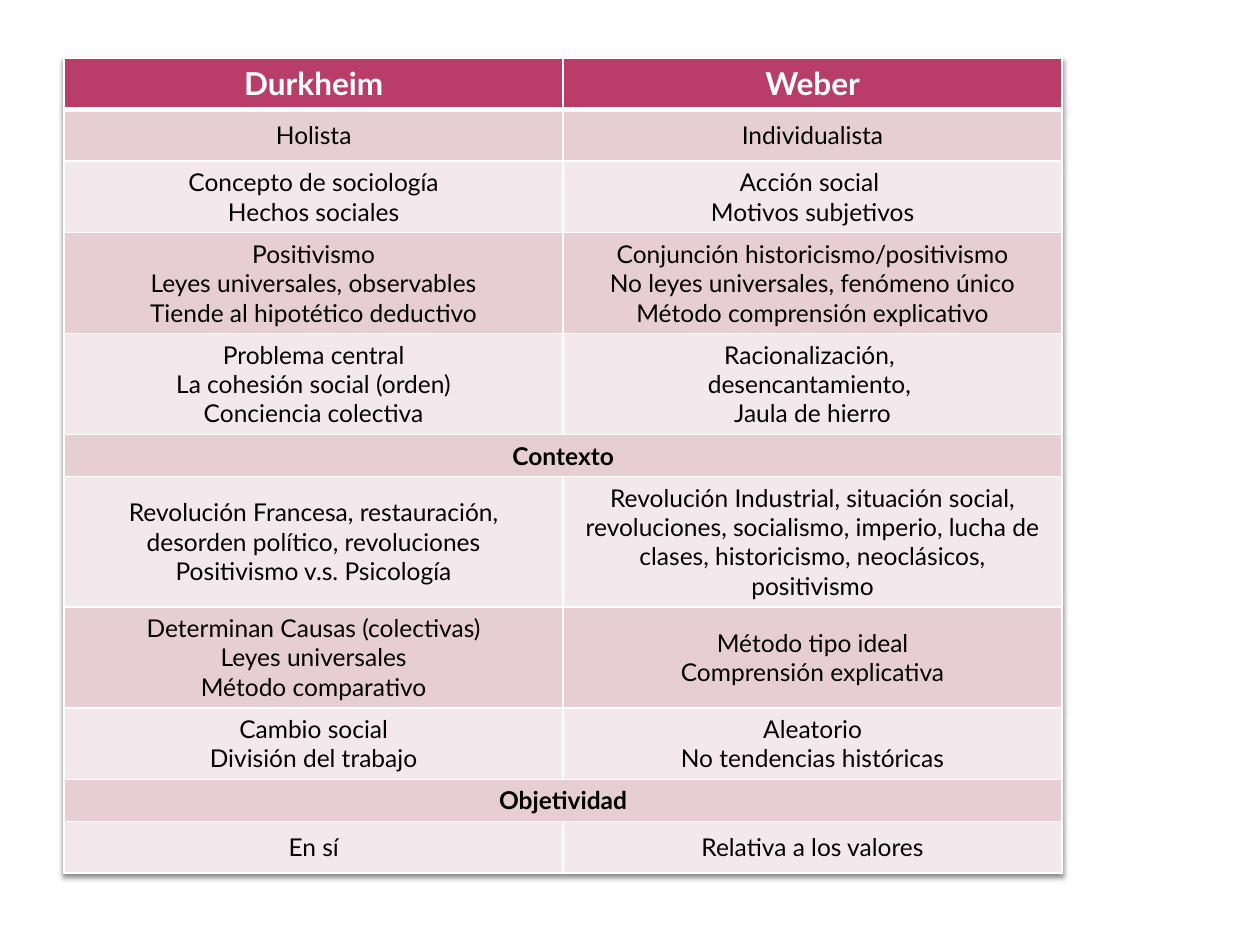
from dataclasses import dataclass

from lxml.etree import SubElement
from pptx import Presentation
from pptx.dml.color import RGBColor
from pptx.enum.text import MSO_ANCHOR, PP_ALIGN
from pptx.oxml import parse_xml
from pptx.oxml.ns import nsdecls, qn
from pptx.util import Inches, Pt

# One tuple per row, one list of paragraphs per cell; a single cell spans the row.
ROWS = [
    (["Durkheim"], ["Weber"]),
    (["Holista"], ["Individualista"]),
    (["Concepto de sociología", "Hechos sociales"],
     ["Acción social ", "Motivos subjetivos"]),
    (["Positivismo", "Leyes universales, observables",
      "Tiende al hipotético deductivo"],
     ["Conjunción historicismo/positivismo",
      "No leyes universales, fenómeno único",
      "Método comprensión explicativo"]),
    (["Problema central", "La cohesión social (orden)", "Conciencia colectiva"],
     ["Racionalización, ", "desencantamiento, ", "Jaula de hierro"]),
    (["Contexto"],),
    (["Revolución Francesa, restauración, desorden político, revoluciones",
      "Positivismo v.s. Psicología"],
     ["Revolución Industrial, situación social, revoluciones, socialismo, "
      "imperio, lucha de clases, historicismo, neoclásicos, positivismo"]),
    (["Determinan Causas (colectivas)", "Leyes universales", "Método comparativo"],
     ["Método tipo ideal", "Comprensión explicativa"]),
    (["Cambio social", "División del trabajo"],
     ["Aleatorio", "No tendencias históricas"]),
    (["Objetividad"],),
    (["En sí"], ["Relativa a los valores"]),
]


@dataclass(frozen=True)
class Theme:
    font: str = "Lato"
    header: str = "B83D68"
    bands: tuple = ("F3E8EB", "E6CED4")
    white: str = "FFFFFF"
    black: str = "000000"
    header_size: int = 18
    body_size: int = 14
    rule: int = 1
    header_rule: int = 3


THEME = Theme()
LEFT, TOP, COL_W = 0.51, 0.46, 3.96
ROW_H, SECTION_H = 0.41, 0.25  # minimum heights; rows grow with their text


def set_borders(cell, top, bottom):
    tc_pr = cell._tc.get_or_add_tcPr()
    widths = {"L": THEME.rule, "R": THEME.rule, "T": top, "B": bottom}
    for side, width in widths.items():
        ln = SubElement(tc_pr, qn(f"a:ln{side}"), w=str(Pt(width)))
        fill = SubElement(ln, qn("a:solidFill"))
        SubElement(fill, qn("a:srgbClr"), val=THEME.white)


def fill_cell(cell, lines, row, bold):
    header = row == 0
    set_borders(cell,
                THEME.header_rule if row == 1 else THEME.rule,
                THEME.header_rule if header else THEME.rule)
    cell.fill.solid()
    color = THEME.header if header else THEME.bands[row % 2]
    cell.fill.fore_color.rgb = RGBColor.from_string(color)
    cell.vertical_anchor = MSO_ANCHOR.MIDDLE
    tf = cell.text_frame
    for i, line in enumerate(lines):
        p = tf.add_paragraph() if i else tf.paragraphs[0]
        p.alignment = PP_ALIGN.CENTER
        r = p.add_run()
        r.text = line
        r.font.name = THEME.font
        r.font.size = Pt(THEME.header_size if header else THEME.body_size)
        r.font.bold = bold
        r.font.color.rgb = RGBColor.from_string(
            THEME.white if header else THEME.black)


def add_shadow(table):
    table._tbl.tblPr.insert(0, parse_xml(
        f'<a:effectLst {nsdecls("a")}>'
        '<a:outerShdw blurRad="38100" dist="25400" dir="5400000" rotWithShape="0">'
        f'<a:srgbClr val="{THEME.black}"><a:alpha val="45000"/></a:srgbClr>'
        '</a:outerShdw></a:effectLst>'))


def main():
    prs = Presentation()
    prs.slide_width, prs.slide_height = Inches(10), Inches(7.5)
    s = prs.slides.add_slide(prs.slide_layouts[6])
    table = s.shapes.add_table(
        len(ROWS), 2, Inches(LEFT), Inches(TOP),
        Inches(2 * COL_W), Inches(ROW_H * len(ROWS))).table
    add_shadow(table)
    for column in table.columns:
        column.width = Inches(COL_W)
    for row, cells in enumerate(ROWS):
        section = len(cells) == 1
        table.rows[row].height = Inches(SECTION_H if section else ROW_H)
        if section:
            table.cell(row, 0).merge(table.cell(row, 1))
        for col, lines in enumerate(cells):
            fill_cell(table.cell(row, col), lines, row, section or row == 0)
    prs.save("out.pptx")


if __name__ == "__main__":
    main()
